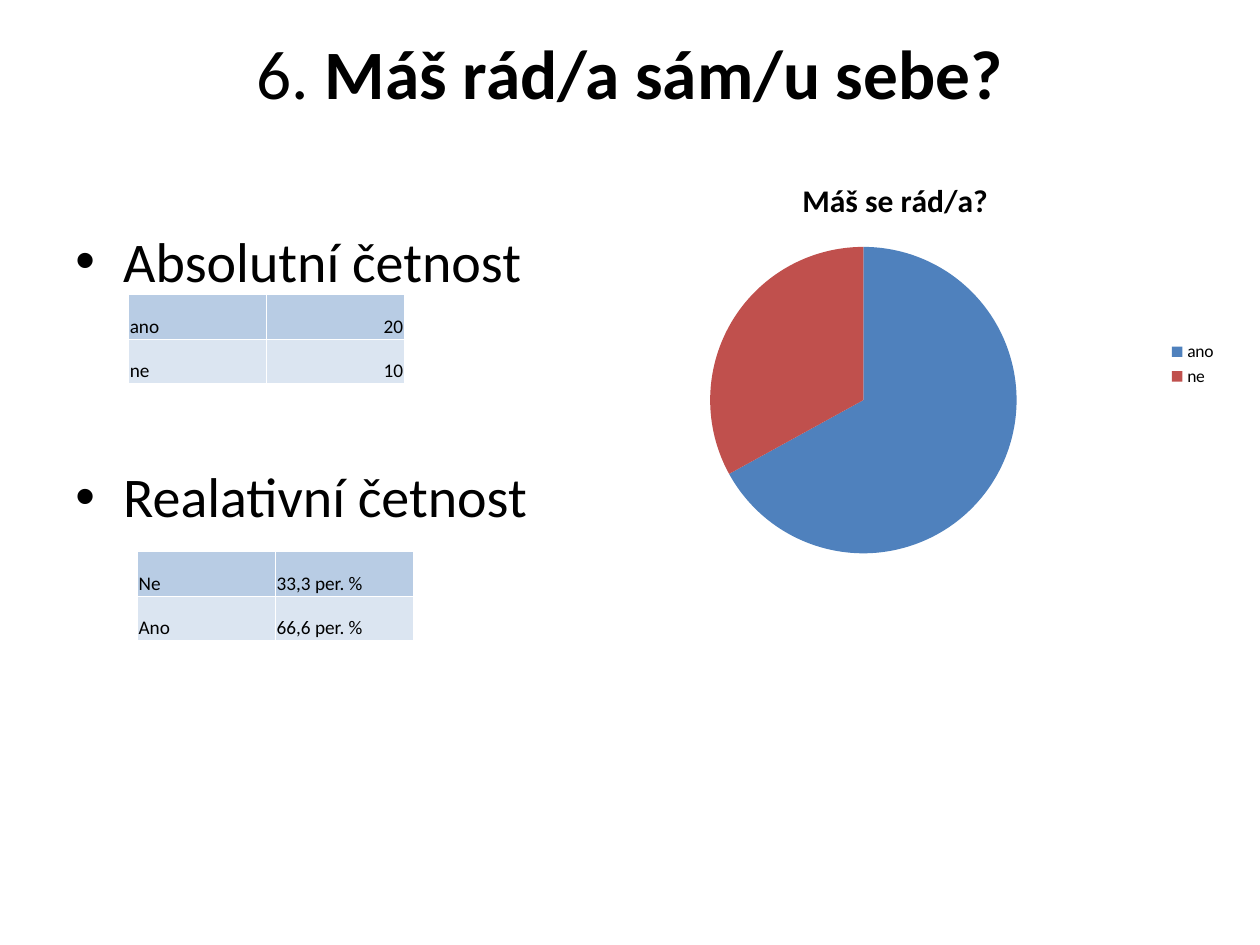
from lxml import etree
from pptx import Presentation, util as u
from pptx.chart.data import CategoryChartData
from pptx.dml.color import RGBColor
from pptx.enum import chart as charts, text
from pptx.oxml import ns

FONT = "Calibri"
COLORS = {"ink": "000000", "border": "FFFFFF", "head_row": "B8CCE4",
          "plain_row": "DBE5F1", "ano": "4F81BD", "ne": "C0504D"}
TITLE_SIZE = 39.6


def color(name):
    return RGBColor.from_string(COLORS[name])


def inches(box):
    return [u.Inches(length) for length in box]


def style(font, size, bold=False):
    font.name, font.size, font.bold = FONT, u.Pt(size), bold
    font.color.rgb = color("ink")


def add_child(parent, tag, **attributes):
    return etree.SubElement(parent, ns.qn(tag), attributes)


def place_title(page, box):
    """Fill the title; its closing line break lifts the words within the box."""
    title = page.shapes.title
    title.left, title.top, title.width, title.height = inches(box)
    frame = title.text_frame
    frame.vertical_anchor = text.MSO_ANCHOR.MIDDLE
    para = frame.paragraphs[0]
    para.alignment = text.PP_ALIGN.CENTER
    for words, bold in (("6.", False), (" Máš rád/a sám/u sebe?", True)):
        span = para.add_run()
        span.text = words
        style(span.font, TITLE_SIZE, bold)
    para.add_line_break()
    size = str(round(TITLE_SIZE * 100))
    add_child(para._p[-1], "a:rPr", sz=size)
    add_child(para._p, "a:endParaRPr", sz=size)


def place_bullets(page, box, items, gap):
    frame = page.shapes.add_textbox(*inches(box)).text_frame
    frame.word_wrap = True
    frame.text = "\n".join(items)
    for index, para in enumerate(frame.paragraphs):
        para.space_before = u.Pt(gap if index else 0)
        style(para.runs[0].font, 32)
        props = para._p.get_or_add_pPr()
        indent = u.Inches(0.38)
        props.set("marL", str(indent))
        props.set("indent", str(-indent))
        add_child(props, "a:buFont", typeface="Arial")
        add_child(props, "a:buChar", char="•")


def border_cell(cell):
    props = cell._tc.get_or_add_tcPr()
    for index, side in enumerate("LRTB"):
        line = etree.Element(ns.qn(f"a:ln{side}"), w=str(u.Pt(0.5)))
        fill = add_child(line, "a:solidFill")
        add_child(fill, "a:srgbClr", val=COLORS["border"])
        props.insert(index, line)


def place_table(page, box, rows):
    table = page.shapes.add_table(len(rows), len(rows[0]), *inches(box)).table
    for row, (values, fill) in enumerate(zip(rows, ("head_row", "plain_row"))):
        for column, value in enumerate(values):
            cell = table.cell(row, column)
            cell.margin_left = cell.margin_right = cell.margin_top = u.Inches(0.01)
            cell.margin_bottom = 0
            cell.vertical_anchor = text.MSO_ANCHOR.BOTTOM
            cell.fill.solid()
            cell.fill.fore_color.rgb = color(fill)
            border_cell(cell)
            cell.text = value
            para = cell.text_frame.paragraphs[0]
            para.alignment = (text.PP_ALIGN.RIGHT if value.isdigit()
                              else text.PP_ALIGN.LEFT)
            style(para.runs[0].font, 11)


def place_pie(page, box, title, shares):
    data = CategoryChartData()
    data.categories = list(shares)
    data.add_series("Series 1", list(shares.values()))
    chart = page.shapes.add_chart(charts.XL_CHART_TYPE.PIE, *inches(box), data).chart
    style(chart.font, 10)
    chart.has_title = True
    chart.chart_title.include_in_layout = False
    chart.chart_title.text_frame.text = title
    style(chart.chart_title.text_frame.paragraphs[0].runs[0].font, 18, True)
    chart.has_legend = True
    chart.legend.position = charts.XL_LEGEND_POSITION.RIGHT
    chart.legend.include_in_layout = False
    plot = chart.plots[0]
    plot.vary_by_categories = True
    for index, name in enumerate(shares):
        fill = plot.series[0].points[index].format.fill
        fill.solid()
        fill.fore_color.rgb = color(name)


def main():
    deck = Presentation()
    width, height = 10, 7.5
    deck.slide_width, deck.slide_height = u.Inches(width), u.Inches(height)
    page = deck.slides.add_slide(deck.slide_layouts[5])
    margin = 0.05 * width
    inner = width - 2 * margin
    place_title(page, (margin, 0.47, inner, 0.86))
    place_bullets(page, (margin, 1.75, inner, 0.66 * height),
                  ("Absolutní četnost", "Realativní četnost"), gap=96)
    place_pie(page, (4.45, 1.25, 5.31, 3.28), "Máš se rád/a?", {"ano": 67, "ne": 33})
    table_size = (2.19, 0.7)
    place_table(page, (1.02, 2.34, *table_size), (("ano", "20"), ("ne", "10")))
    place_table(page, (1.09, 4.38, *table_size),
                (("Ne", "33,3 per. %"), ("Ano", "66,6 per. %")))
    deck.save("out.pptx")


if __name__ == "__main__":
    main()
